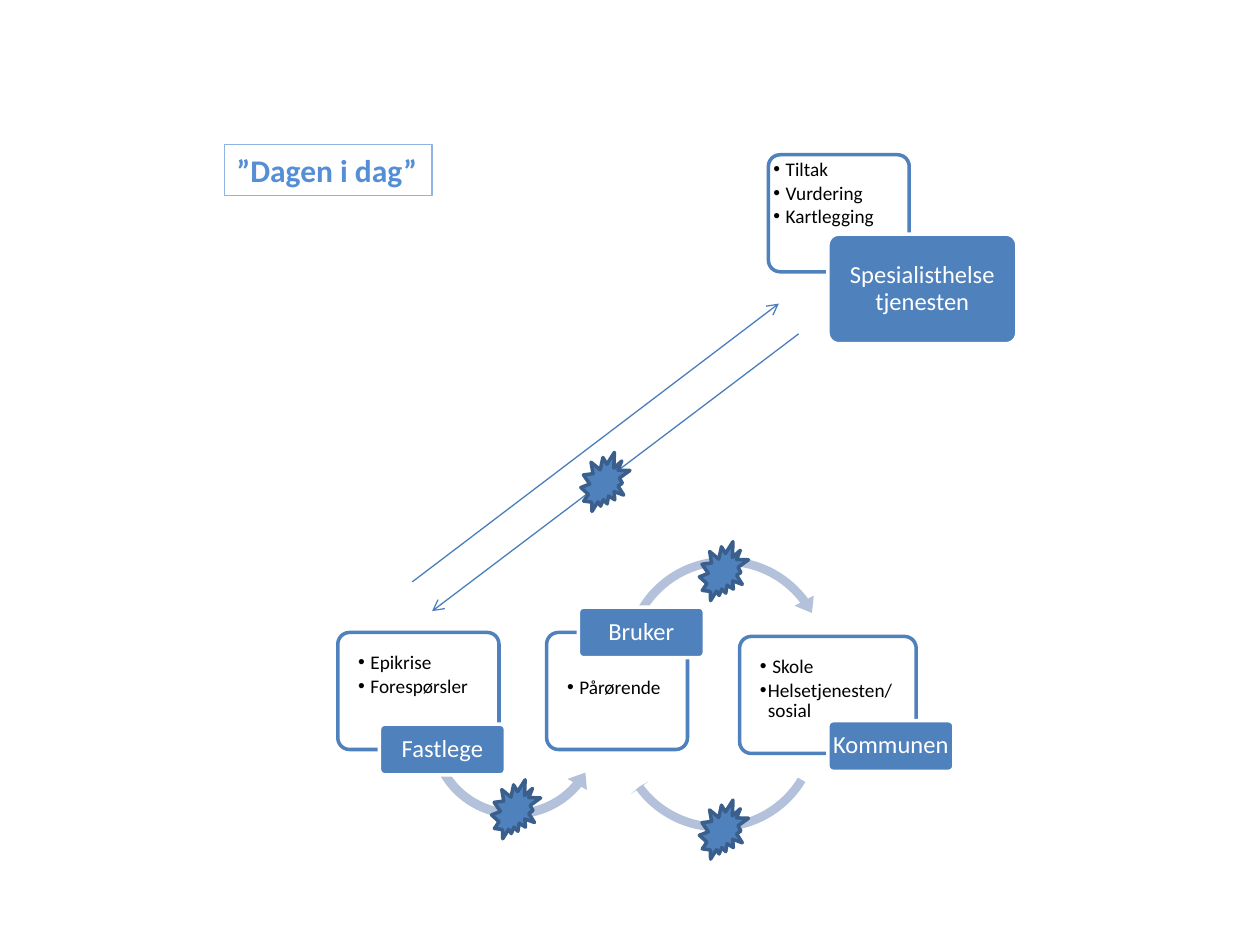
import pptx
import pptx.util
from lxml import etree
from pptx.dml.color import RGBColor
from pptx.enum.shapes import MSO_CONNECTOR, MSO_SHAPE
from pptx.enum.text import MSO_ANCHOR, MSO_AUTO_SIZE, PP_ALIGN
from pptx.oxml.ns import qn

Cm, Pt = pptx.util.Cm, pptx.util.Pt

HUES = {
    "blue": "4F81BD", "edge": "3A5F8C", "arc": "B3C1DB", "line": "4B7EBC",
    "frame": "8EB4E3", "title": "558ED5", "white": "FFFFFF", "black": "000000",
}


def hue(name):
    return RGBColor.from_string(HUES[name])


def write(par, text, size=14, color="white", bold=False, align=PP_ALIGN.LEFT,
          after=0, space=0.9):
    """Put one formatted run in a paragraph."""
    par.alignment = align
    par.line_spacing = space
    par.space_before, par.space_after = Pt(0), Pt(after)
    run = par.add_run()
    run.text = text
    run.font.name, run.font.size, run.font.bold = "Calibri", Pt(size), bold
    run.font.color.rgb = hue(color)


class Board:
    """Holds the style and the current slide."""

    def __init__(self, slide, font=11, width=2):
        self.slide, self.font, self.width = slide, font, width
        self.lists = [p for p in slide.placeholders if p != slide.shapes.title]

    def place(self, holder, x, y, w, h):
        """Move a placeholder and bring it to the front."""
        holder.left, holder.top, holder.width, holder.height = map(Cm, (x, y, w, h))
        holder.element.getparent().append(holder.element)

    def frame(self, shape, pad_x, pad_y, anchor, wrap=True):
        frame = shape.text_frame
        frame.auto_size, frame.word_wrap = MSO_AUTO_SIZE.NONE, wrap
        frame.vertical_anchor = anchor
        frame.margin_left = frame.margin_right = Cm(pad_x)
        frame.margin_top = frame.margin_bottom = Cm(pad_y)
        return frame

    def shape(self, kind, x, y, w, h, fill, line=None, adj=()):
        item = self.slide.shapes.add_shape(kind, Cm(x), Cm(y), Cm(w), Cm(h))
        item.shadow.inherit = False
        for i, value in enumerate(adj):
            item.adjustments[i] = value
        item.fill.solid()
        item.fill.fore_color.rgb = hue(fill)
        if line:
            item.line.color.rgb, item.line.width = hue(line), Pt(self.width)
        else:
            item.line.fill.background()
        return item

    def title(self, text, x, y, w, h):
        head = self.slide.shapes.title
        self.place(head, x, y, w, h)
        head.line.color.rgb, head.line.width = hue("frame"), Pt(0.75)
        frame = self.frame(head, 0.25, 0.13, MSO_ANCHOR.TOP, wrap=False)
        write(frame.paragraphs[0], text, size=18, color="title", bold=True, space=1)

    def points(self, items, x, y, w, pad):
        holder = self.lists.pop(0)
        self.place(holder, x, y, w, 1.75)
        frame = self.frame(holder, pad, pad, MSO_ANCHOR.TOP)
        for i, text in enumerate(items):
            par = frame.add_paragraph() if i else frame.paragraphs[0]
            par.level = 1
            write(par, text, size=self.font, color="black", after=1.65)
            props = par._p.get_or_add_pPr()
            props.set("marL", str(Cm(0.16)))
            props.set("indent", str(-Cm(0.16)))
            etree.SubElement(props, qn("a:buChar")).set("char", "•")

    def label(self, text, x, y, w=2.54, h=1.02):
        tag = self.shape(MSO_SHAPE.ROUNDED_RECTANGLE, x, y, w, h, "blue", "white", [0.1])
        # Narrow side margins keep the longest name on one line
        frame = self.frame(tag, 0.01, 0.05, MSO_ANCHOR.MIDDLE)
        write(frame.paragraphs[0], text, align=PP_ALIGN.CENTER)

    def card(self, name, items, x, y, w, tag, drop=0.05, pad=0.36):
        """A framed list with a name label laid over it."""
        self.shape(MSO_SHAPE.ROUNDED_RECTANGLE, x, y, w, 2.36, "white", "blue", [0.1])
        self.points(items, x + 0.05, y + drop, w - 0.1, pad)
        self.label(name, *tag)

    def arc(self, kind, x, y, size, adj, turn=0):
        self.shape(kind, x, y, size, size, "arc", adj=adj).rotation = turn

    def arrow(self, *ends):
        line = self.slide.shapes.add_connector(MSO_CONNECTOR.STRAIGHT, *map(Cm, ends))
        line.line.color.rgb, line.line.width = hue("line"), Pt(0.75)
        etree.SubElement(line.line._get_or_add_ln(), qn("a:tailEnd")).set("type", "arrow")
        etree.SubElement(line.element.spPr, qn("a:effectLst"))

    def burst(self, x, y):
        self.shape(MSO_SHAPE.EXPLOSION2, x, y, 0.99, 1.19, "blue", "edge")


def main():
    deck = pptx.Presentation()
    deck.slide_width, deck.slide_height = Cm(25.4), Cm(19.05)
    # The comparison layout has a title and four text holders
    board = Board(deck.slides.add_slide(deck.slide_layouts[4]))

    # Curved arrows, under the cards
    bow = MSO_SHAPE.CIRCULAR_ARROW
    board.arc(MSO_SHAPE.LEFT_CIRCULAR_ARROW, 8.51, 12.9, 3.73,
              [0.05, 6.07, 23.83, 90.25, 0.06])
    board.arc(bow, 12.45, 11.1, 4.37, [0.04, 5.13, 194, 126.64, 0.05])
    board.arc(bow, 12.29, 12.52, 4.37, [0.04, 0.43, 194, 126.64, 0.05], turn=180)

    # Cards
    board.card("Fastlege", [" Epikrise", " Forespørsler"],
               6.81, 12.75, 3.25, (7.65, 14.6))
    board.card("Bruker", [" Pårørende"],
               11.02, 12.75, 2.84, (11.66, 12.24), drop=0.56)
    board.card("Kommunen", [" Skole", "Helsetjenesten/sosial"],
               14.91, 12.83, 3.56, (16.69, 14.53))
    board.card("Spesialisthelse tjenesten", [" Tiltak", " Vurdering", " Kartlegging"],
               15.49, 3.12, 2.84, (16.69, 4.72, 3.81, 2.21), pad=0.05)

    # Straight arrows and title
    board.arrow(16.1, 6.73, 8.71, 12.32)
    board.arrow(8.31, 11.73, 15.7, 6.12)
    board.title("”Dagen i dag”", 4.52, 2.92, 4.19, 1.02)

    # Bursts where the flow breaks
    for spot in [(9.91, 15.72), (14.1, 10.92), (11.71, 9.12), (14.1, 16.13)]:
        board.burst(*spot)

    deck.save("out.pptx")


if __name__ == "__main__":
    main()
